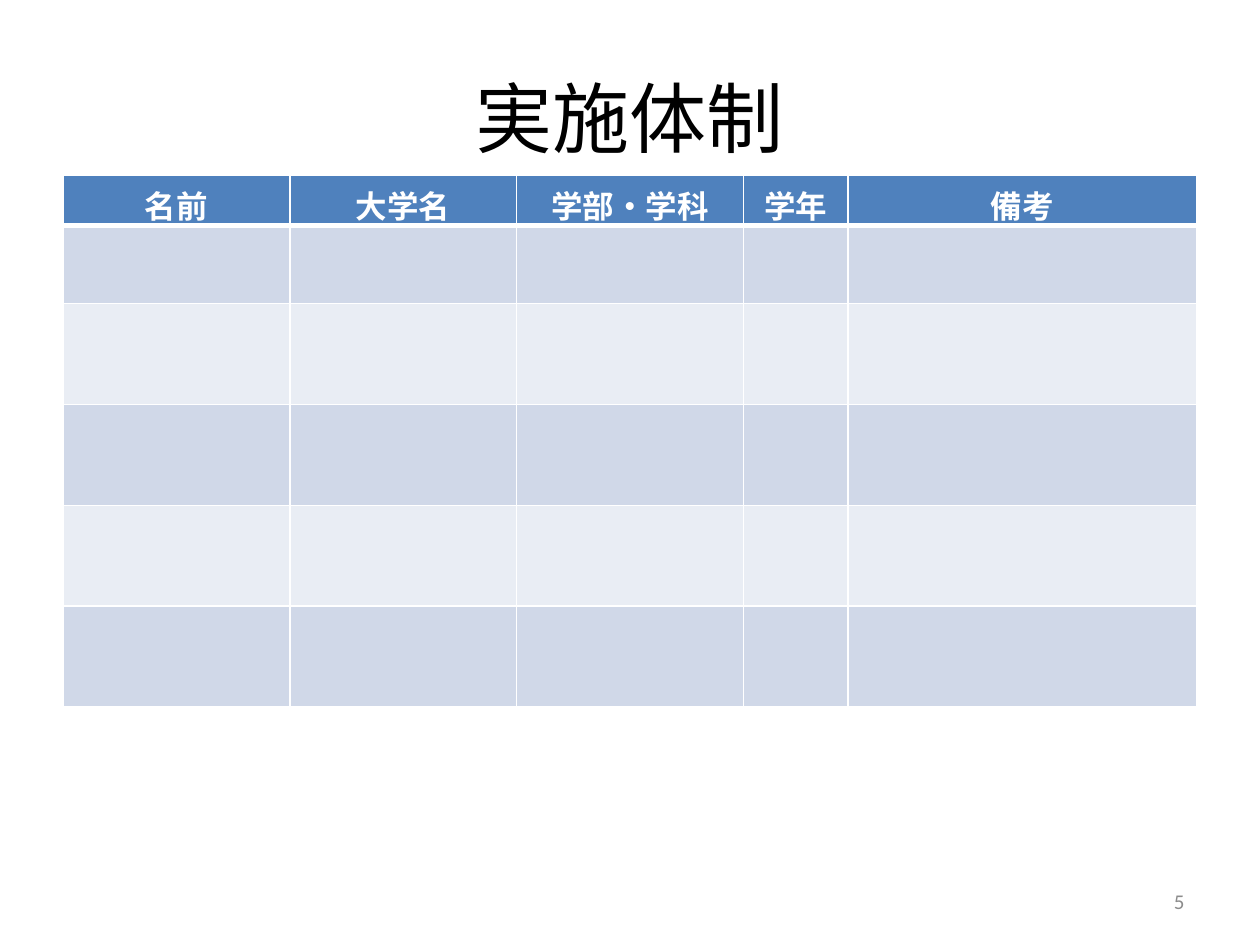
from lxml.etree import SubElement
from pptx import Presentation
from pptx.dml.color import RGBColor
from pptx.enum.text import MSO_ANCHOR, PP_ALIGN
from pptx.oxml.ns import qn
from pptx.util import Inches, Pt

WIDTH, HEIGHT = 10, 7.5
MARGIN = 0.05 * WIDTH
CONTENT_WIDTH = WIDTH - 2 * MARGIN


def color(hex_string):
    return RGBColor.from_string(hex_string)


def write(text_frame, text, size, hex_string, alignment, bold=False):
    text_frame.text = text
    text_frame.word_wrap = True
    text_frame.vertical_anchor = MSO_ANCHOR.MIDDLE
    paragraph = text_frame.paragraphs[0]
    paragraph.alignment = alignment
    font = paragraph.runs[0].font
    font.name, font.size, font.bold = "Calibri", Pt(size), bold
    font.color.rgb = color(hex_string)


presentation = Presentation()
presentation.slide_width = Inches(WIDTH)
presentation.slide_height = Inches(HEIGHT)
slide = presentation.slides.add_slide(presentation.slide_layouts[6])

# Title and slide number
text_boxes = [
    ("実施体制", MARGIN, 0.04 * HEIGHT, CONTENT_WIDTH, 1.25, 44, "000000", PP_ALIGN.CENTER),
    ("5", 7.17, 6.95, 2.33, 0.4, 12, "8C8C8C", PP_ALIGN.RIGHT),
]
for text, left, top, width, height, size, hex_string, alignment in text_boxes:
    box = slide.shapes.add_textbox(Inches(left), Inches(top), Inches(width), Inches(height))
    write(box.text_frame, text, size, hex_string, alignment)

# Member table: three equal columns, a narrow year, the rest for remarks
headings = ["名前", "大学名", "学部・学科", "学年", "備考"]
column_widths = [CONTENT_WIDTH / 5] * 3 + [0.83, 2.77]
row_heights = [0.31, 0.62] + [0.8] * 4
table = slide.shapes.add_table(
    len(row_heights), len(headings), Inches(MARGIN), Inches(1.39),
    Inches(CONTENT_WIDTH), Inches(sum(row_heights))).table
for column, width in zip(table.columns, column_widths):
    column.width = Inches(width)
for row, height in zip(table.rows, row_heights):
    row.height = Inches(height)

# Header text
for column_index, heading in enumerate(headings):
    cell = table.cell(0, column_index)
    write(cell.text_frame, heading, 18, "FFFFFF", PP_ALIGN.CENTER, bold=True)
    cell.vertical_anchor = MSO_ANCHOR.TOP

# White borders, thicker under the header, and banded fills
for row_index, row in enumerate(table.rows):
    band = "D0D8E8" if row_index % 2 else "E9EDF4"
    for cell in row.cells:
        properties = cell._tc.get_or_add_tcPr()
        for side in ("L", "R", "T", "B"):
            thick = (row_index, side) in ((0, "B"), (1, "T"))
            line = SubElement(properties, qn(f"a:ln{side}"), w=str(Pt(3 if thick else 1)))
            SubElement(SubElement(line, qn("a:solidFill")), qn("a:srgbClr"), val="FFFFFF")
        cell.fill.solid()
        cell.fill.fore_color.rgb = color(band if row_index else "4F81BD")

presentation.save("out.pptx")
